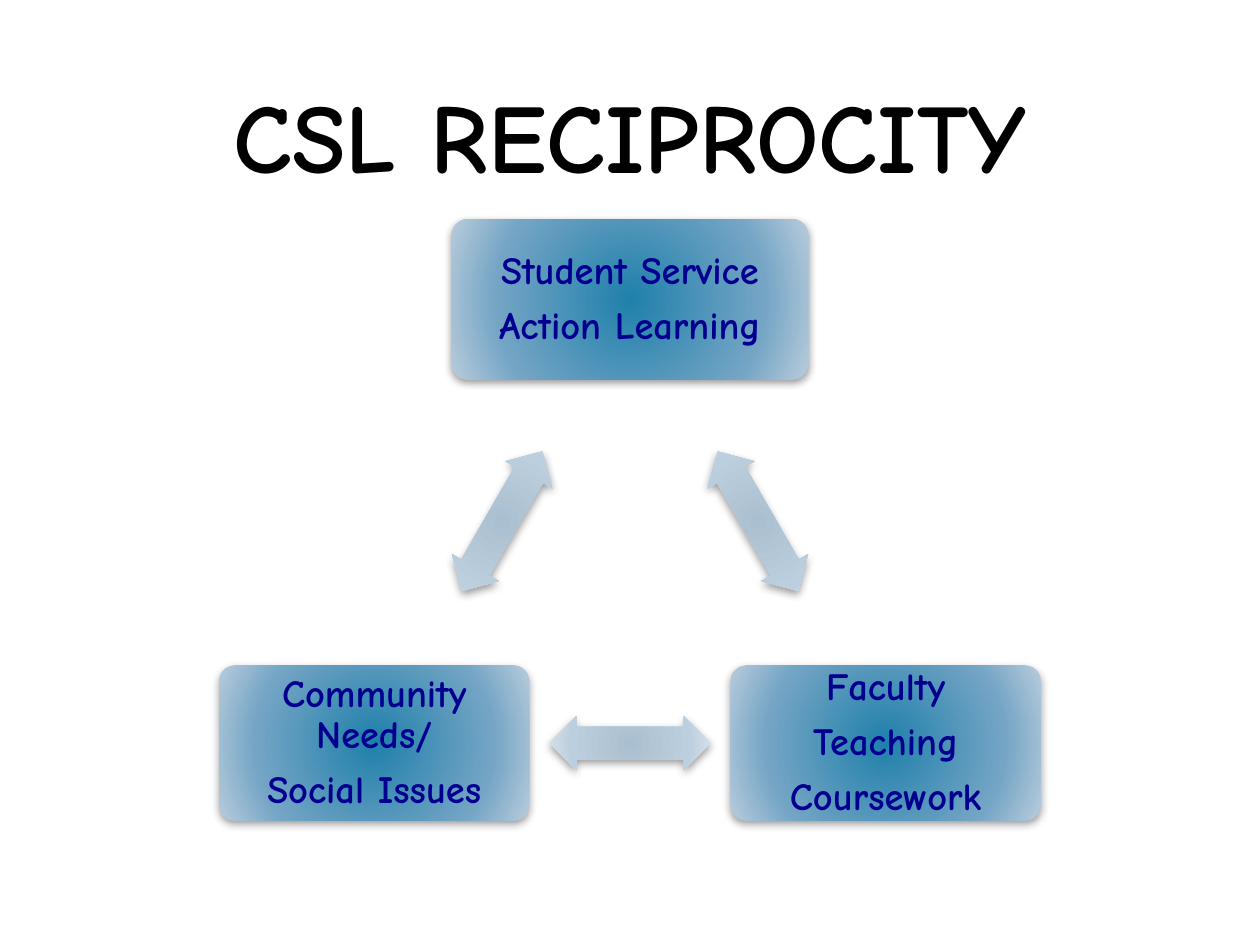
from lxml import etree
from pptx import Presentation
from pptx.dml.color import RGBColor
from pptx.enum.shapes import MSO_SHAPE as Shape
from pptx.enum.text import MSO_ANCHOR as Anchor, PP_ALIGN as Align
from pptx.oxml import parse_xml
from pptx.oxml.ns import nsdecls, qn
from pptx.util import Cm, Pt

FONT = "Comic Neue"
BLACK = RGBColor(0x00, 0x00, 0x00)
NAVY = RGBColor(0x00, 0x00, 0x90)
# Gradients from the centre outwards: (position in percent, colour)
CARD_STOPS = [(0, RGBColor(0x20, 0x80, 0xAB)), (69, RGBColor(0x75, 0xA5, 0xC5)),
              (100, RGBColor(0xB8, 0xCC, 0xDC))]
ARROW_STOPS = [(0, RGBColor(0xAA, 0xBF, 0xD0)), (69, RGBColor(0xBC, 0xCF, 0xDE)),
               (100, RGBColor(0xD8, 0xE2, 0xEB))]

# Centimetres: each card has its text lines, width and height
TOP_CARD = (["Student Service", "Action Learning"], 7.19, 3.23)
RIGHT_CARD = (["Faculty", "Teaching", "Coursework"], 6.25, 3.12)
LEFT_CARD = (["Community Needs/", "Social Issues"], 6.25, 3.12)
ARROW_WIDTH, ARROW_HEIGHT = 3.25, 1.09


def write_paragraphs(text_frame, lines, size, color):
    """Fill a text frame with bold centred paragraphs."""
    text_frame.word_wrap = True
    text_frame.text = "\n".join(lines)
    for paragraph in text_frame.paragraphs:
        paragraph.alignment = Align.CENTER
        for run in paragraph.runs:
            run.font.name, run.font.size, run.font.bold = FONT, Pt(size), True
            run.font.color.rgb = color


def style_shape(shape, stops):
    """Give a shape a radial gradient, no outline and a soft shadow below."""
    shape.line.fill.background()
    shape.shadow.inherit = False
    properties = shape._element.spPr
    stop_xml = "".join(
        f'<a:gs pos="{position * 1000}"><a:srgbClr val="{color}"/></a:gs>'
        for position, color in stops)
    gradient = parse_xml(
        f'<a:gradFill {nsdecls("a")} rotWithShape="1"><a:gsLst>{stop_xml}</a:gsLst>'
        '<a:path path="circle"><a:fillToRect l="100000" t="100000" r="100000" b="100000"/>'
        '</a:path></a:gradFill>')
    properties.find(qn("a:prstGeom")).addnext(gradient)
    shadow = etree.SubElement(properties.find(qn("a:effectLst")), qn("a:outerShdw"),
                              blurRad=str(Pt(5)), dist=str(Pt(2)), dir="5400000",
                              rotWithShape="0")
    color = etree.SubElement(shadow, qn("a:srgbClr"), val=str(BLACK))
    etree.SubElement(color, qn("a:alpha"), val="40000")


def add_centred(slide, kind, center, width, height, stops):
    """Add a styled shape around a centre point."""
    x, y = center
    shape = slide.shapes.add_shape(kind, Cm(x - width / 2), Cm(y - height / 2),
                                   Cm(width), Cm(height))
    style_shape(shape, stops)
    return shape


def add_card(slide, center, card):
    lines, width, height = card
    shape = add_centred(slide, Shape.ROUNDED_RECTANGLE, center, width, height, CARD_STOPS)
    shape.adjustments[0] = 0.1
    text_frame = shape.text_frame
    write_paragraphs(text_frame, lines, 22, NAVY)
    text_frame.vertical_anchor = Anchor.MIDDLE
    text_frame.margin_left = text_frame.margin_right = Cm(0.23)
    text_frame.margin_top = text_frame.margin_bottom = Cm(0.23)
    for paragraph in text_frame.paragraphs:
        paragraph.line_spacing = 0.9
        paragraph.space_after = Pt(7.7)


def add_arrow(slide, start, end, rotation):
    """Add a double arrow halfway between two card centres."""
    middle = [(a + b) / 2 for a, b in zip(start, end)]
    arrow = add_centred(slide, Shape.LEFT_RIGHT_ARROW, middle,
                        ARROW_WIDTH, ARROW_HEIGHT, ARROW_STOPS)
    arrow.adjustments[0], arrow.adjustments[1] = 0.6, 0.5
    arrow.rotation = rotation


def add_title(slide, left, top, width, height):
    title = slide.shapes.add_textbox(Cm(left), Cm(top), Cm(width), Cm(height))
    write_paragraphs(title.text_frame, ["CSL RECIPROCITY"], 56, BLACK)
    title.text_frame.vertical_anchor = Anchor.BOTTOM


def add_cycle(slide, left, top, width, height):
    """Place three cards in a triangle, joined by double arrows."""
    cards = [TOP_CARD, RIGHT_CARD, LEFT_CARD]
    bottom_y = top + height - RIGHT_CARD[2] / 2
    centers = [
        (left + width / 2, top + TOP_CARD[2] / 2),
        (left + width - RIGHT_CARD[1] / 2, bottom_y),
        (left + LEFT_CARD[1] / 2, bottom_y),
    ]
    for index, (center, card) in enumerate(zip(centers, cards)):
        add_card(slide, center, card)
        add_arrow(slide, center, centers[(index + 1) % 3], 60 + 120 * index)


def main():
    presentation = Presentation()
    presentation.slide_width, presentation.slide_height = Cm(25.4), Cm(19.05)
    slide = presentation.slides.add_slide(presentation.slide_layouts[6])
    add_title(slide, 1.52, 0.3, 22.35, 3.71)
    add_cycle(slide, 4.42, 4.42, 16.56, 12.12)
    presentation.save("out.pptx")


if __name__ == "__main__":
    main()
